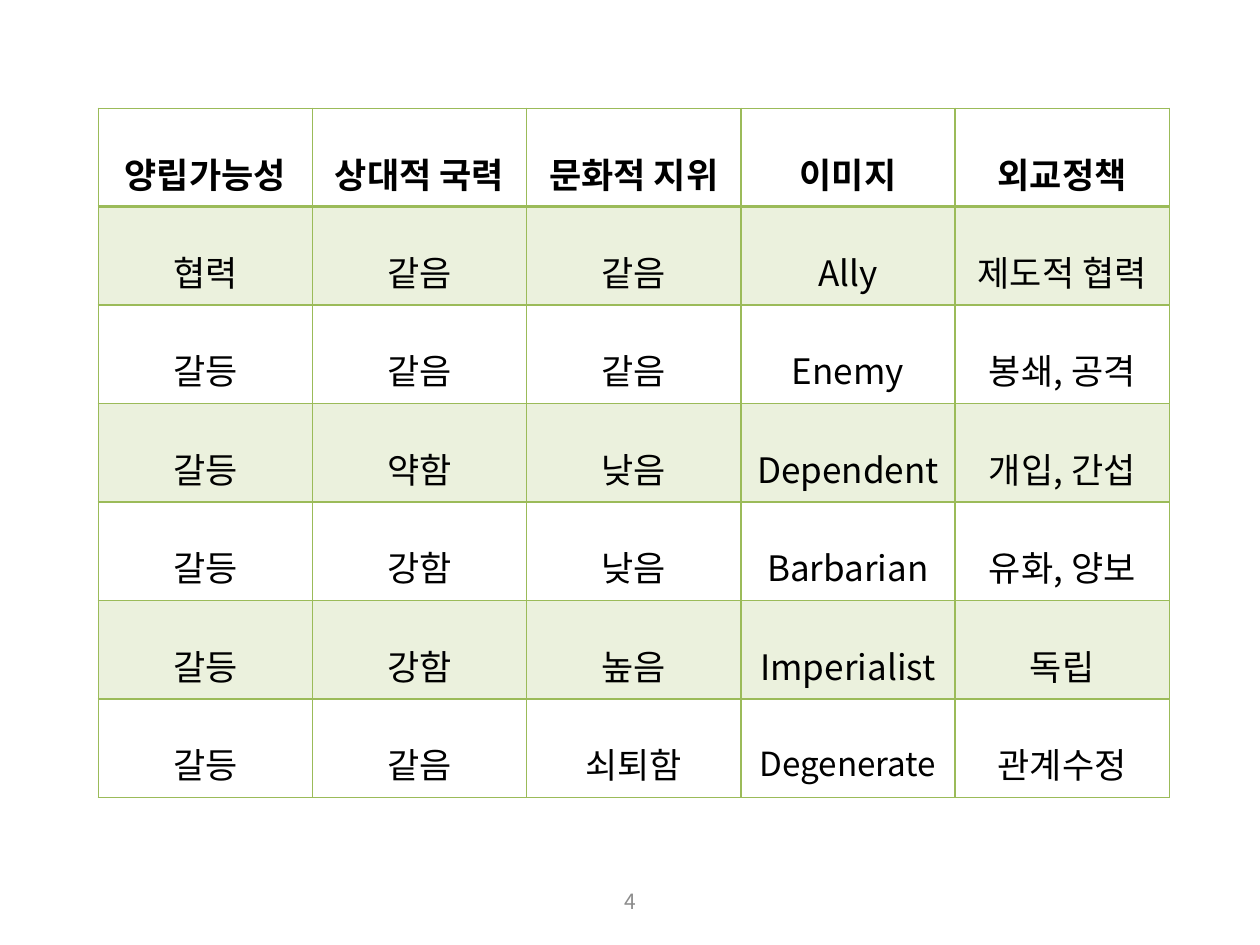
from lxml.etree import SubElement
from pptx import Presentation
from pptx.dml.color import RGBColor
from pptx.enum.text import MSO_ANCHOR as Anchor, PP_ALIGN as Align
from pptx.oxml.ns import qn
from pptx.util import Inches, Pt

BLACK = RGBColor(0x00, 0x00, 0x00)
GRAY = RGBColor(0x8C, 0x8C, 0x8C)
GREEN = RGBColor(0x9B, 0xBB, 0x59)
FONT = "Noto Sans CJK KR"
BAND_OPACITY = 20

ROWS = [
    ["양립가능성", "상대적 국력", "문화적 지위", "이미지", "외교정책"],
    ["협력", "같음", "같음", "Ally", "제도적 협력"],
    ["갈등", "같음", "같음", "Enemy", "봉쇄, 공격"],
    ["갈등", "약함", "낮음", "Dependent", "개입, 간섭"],
    ["갈등", "강함", "낮음", "Barbarian", "유화, 양보"],
    ["갈등", "강함", "높음", "Imperialist", "독립"],
    ["갈등", "같음", "쇠퇴함", "Degenerate", "관계수정"],
]
SMALLER_SIZES = {"Degenerate": 19}


def write_text(text_frame, text, color, line_spacing=1.0, **font_values):
    paragraph = text_frame.paragraphs[0]
    paragraph.alignment = Align.CENTER
    paragraph.line_spacing = line_spacing
    run = paragraph.add_run()
    run.text = text
    for name, value in {"name": FONT, **font_values}.items():
        setattr(run.font, name, value)
    run.font.color.rgb = color
    SubElement(run.font._element, qn("a:ea"), typeface=FONT)


def set_borders(cell, widths):
    """Draw green borders; widths maps a side (L, R, T, B) to points."""
    properties = cell._tc.get_or_add_tcPr()
    for side, width in widths.items():
        line = SubElement(properties, qn(f"a:ln{side}"), w=str(Pt(width)))
        fill = SubElement(line, qn("a:solidFill"))
        SubElement(fill, qn("a:srgbClr"), val=str(GREEN))


def set_band(cell, is_band):
    if not is_band:
        cell.fill.background()
        return
    cell.fill.solid()
    cell.fill.fore_color.rgb = GREEN
    color = cell._tc.tcPr.find(f"{qn('a:solidFill')}/{qn('a:srgbClr')}")
    SubElement(color, qn("a:alpha"), val=str(BAND_OPACITY * 1000))


def add_policy_table(slide, left, top, width, height):
    row_count, column_count = len(ROWS), len(ROWS[0])
    table = slide.shapes.add_table(
        row_count, column_count, left, top, width, height).table
    for column in table.columns:
        column.width = width // column_count
    for row_index, texts in enumerate(ROWS):
        table.rows[row_index].height = height // row_count
        is_header = row_index == 0
        widths = {"L": 1, "R": 1, "T": 2 if row_index == 1 else 1,
                  "B": 2 if is_header else 1}
        for column_index, text in enumerate(texts):
            cell = table.cell(row_index, column_index)
            cell.vertical_anchor = Anchor.MIDDLE
            set_borders(cell, widths)
            set_band(cell, row_index % 2 == 1)
            write_text(cell.text_frame, text, BLACK, 1.6, bold=is_header,
                       size=Pt(SMALLER_SIZES.get(text, 20)))


def add_page_number(slide, left, top, width, height, number):
    text_frame = slide.shapes.add_textbox(left, top, width, height).text_frame
    text_frame.word_wrap = True
    text_frame.vertical_anchor = Anchor.MIDDLE
    write_text(text_frame, str(number), GRAY, size=Pt(12))


def main():
    presentation = Presentation()
    presentation.slide_width = Inches(10)
    presentation.slide_height = Inches(7.5)
    slide = presentation.slides.add_slide(presentation.slide_layouts[6])
    add_policy_table(slide, Inches(0.78), Inches(0.86), Inches(8.5), Inches(5.47))
    add_page_number(slide, Inches(3.42), Inches(6.95), Inches(3.17), Inches(0.4), 4)
    presentation.save("out.pptx")


if __name__ == "__main__":
    main()
